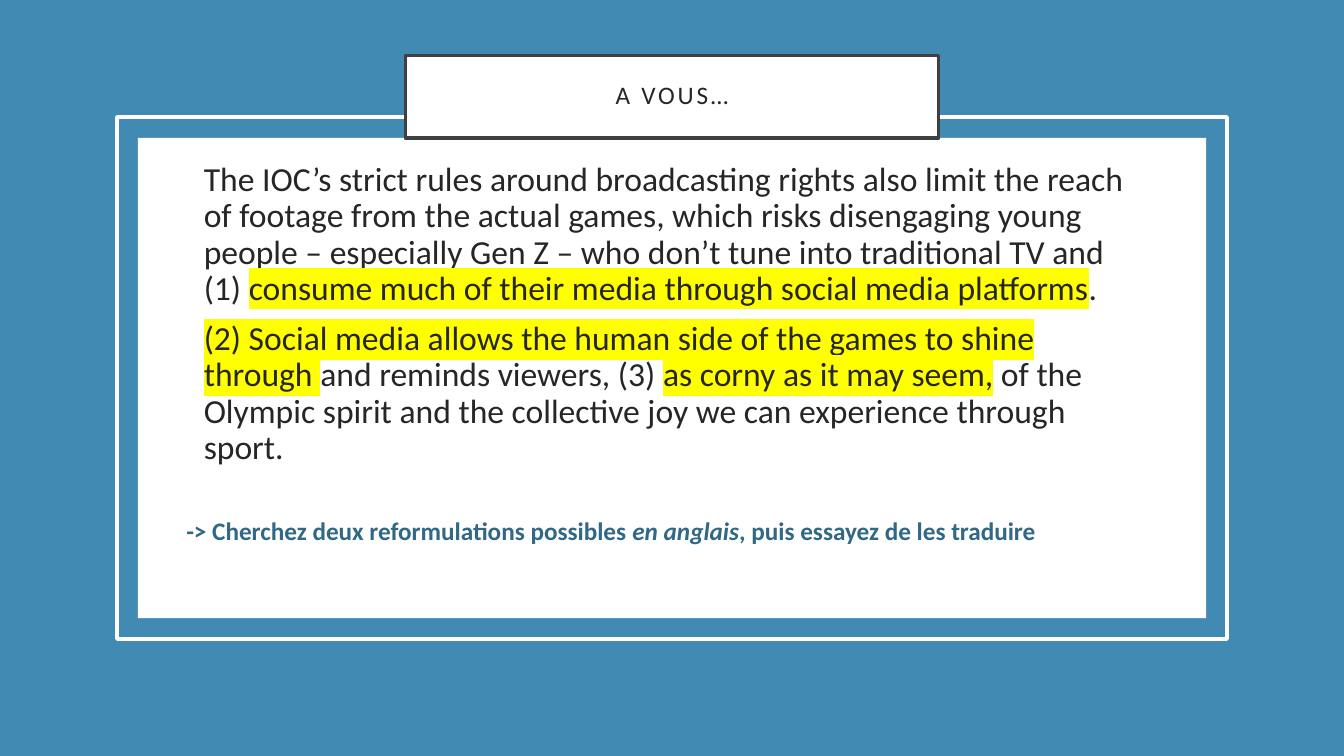
from dataclasses import dataclass

from lxml.etree import SubElement
from pptx import Presentation
from pptx.dml.color import RGBColor
from pptx.enum.shapes import MSO_SHAPE
from pptx.enum.text import MSO_ANCHOR, MSO_AUTO_SIZE, PP_ALIGN
from pptx.oxml.ns import qn
from pptx.util import Pt


@dataclass(frozen=True)
class Theme:
    font: str = "Calibri"
    blue: str = "418AB3"
    dark_blue: str = "316886"
    white: str = "FFFFFF"
    frame: str = "404040"
    ink: str = "262626"
    marker: str = "FFFF00"
    body_size: int = 24
    small_size: int = 18
    outline: float = 2.5


theme = Theme()


def add_panel(s, box, fill=None, line=None):
    sp = s.shapes.add_shape(MSO_SHAPE.RECTANGLE, *[Pt(v) for v in box])
    sp.shadow.inherit = False
    if fill:
        sp.fill.solid()
        sp.fill.fore_color.rgb = RGBColor.from_string(fill)
    else:
        sp.fill.background()
    if line:
        sp.line.color.rgb = RGBColor.from_string(line)
        sp.line.width = Pt(theme.outline)
    else:
        sp.line.fill.background()


def add_run(p, text, size, color, marked=False):
    r = p.add_run()
    r.text = text
    r.font.size = Pt(size)
    r.font.color.rgb = RGBColor.from_string(color)
    if marked:
        highlight = SubElement(r.font._element, qn("a:highlight"))
        SubElement(highlight, qn("a:srgbClr")).set("val", theme.marker)
    r.font.name = theme.font
    return r


prs = Presentation()
prs.slide_width, prs.slide_height = Pt(960), Pt(540)
s = prs.slides.add_slide(prs.slide_layouts[5])

# Backdrop, white panel and outer frame
add_panel(s, (0, 0, 960, 540), fill=theme.blue)
add_panel(s, (98.5, 98.5, 763, 343), fill=theme.white)
add_panel(s, (83.5, 83.5, 793, 373), line=theme.white)

# Title, brought in front of the panels
title = s.shapes.title
s.shapes.element.append(title.element)
title.left, title.top, title.width, title.height = Pt(289.5), Pt(39.5), Pt(381), Pt(59)
title.fill.solid()
title.fill.fore_color.rgb = RGBColor.from_string(theme.white)
title.line.color.rgb = RGBColor.from_string(theme.frame)
title.line.width = Pt(theme.outline)
tf = title.text_frame
tf.auto_size = MSO_AUTO_SIZE.NONE
tf.word_wrap = True
tf.vertical_anchor = MSO_ANCHOR.MIDDLE
tf.margin_left = tf.margin_top = tf.margin_right = tf.margin_bottom = Pt(14.4)
p = tf.paragraphs[0]
p.alignment = PP_ALIGN.CENTER
p.line_spacing = 0.9
r = add_run(p, "A VOUS…", theme.small_size, theme.ink)
r.font._element.set("spc", "200")

# Passage with the highlighted phrases
passage = [
    [
        ("The IOC’s strict rules around broadcasting rights also limit the reach "
         "of footage from the actual games, which risks disengaging young people "
         "– especially Gen Z – who don’t tune into traditional TV and (1) ", False),
        ("consume much of their media through social media platforms", True),
        (".", False),
    ],
    [
        ("(2) Social media allows the human side of the games to shine through ", True),
        ("and reminds viewers, (3) ", False),
        ("as corny as it may seem,", True),
        (" of the Olympic spirit and the collective joy we can experience "
         "through sport.", False),
    ],
]
tf = s.shapes.add_textbox(Pt(138.5), Pt(112.5), Pt(684), Pt(247)).text_frame
tf.word_wrap = True
for i, runs in enumerate(passage):
    p = tf.add_paragraph() if i else tf.paragraphs[0]
    p.line_spacing = 0.9
    if i:
        p.space_before = Pt(10)
    for text, marked in runs:
        add_run(p, text, theme.body_size, theme.ink, marked)

# Task for the class
tf = s.shapes.add_textbox(Pt(126), Pt(364.5), Pt(708.5), Pt(29)).text_frame
tf.word_wrap = True
tf.auto_size = MSO_AUTO_SIZE.SHAPE_TO_FIT_TEXT
p = tf.paragraphs[0]
for text, italic in [
    ("-> Cherchez deux reformulations possibles ", False),
    ("en anglais", True),
    (", puis essayez de les traduire", False),
]:
    r = add_run(p, text, theme.small_size, theme.dark_blue)
    r.font.bold = True
    r.font.italic = italic

prs.save("out.pptx")
